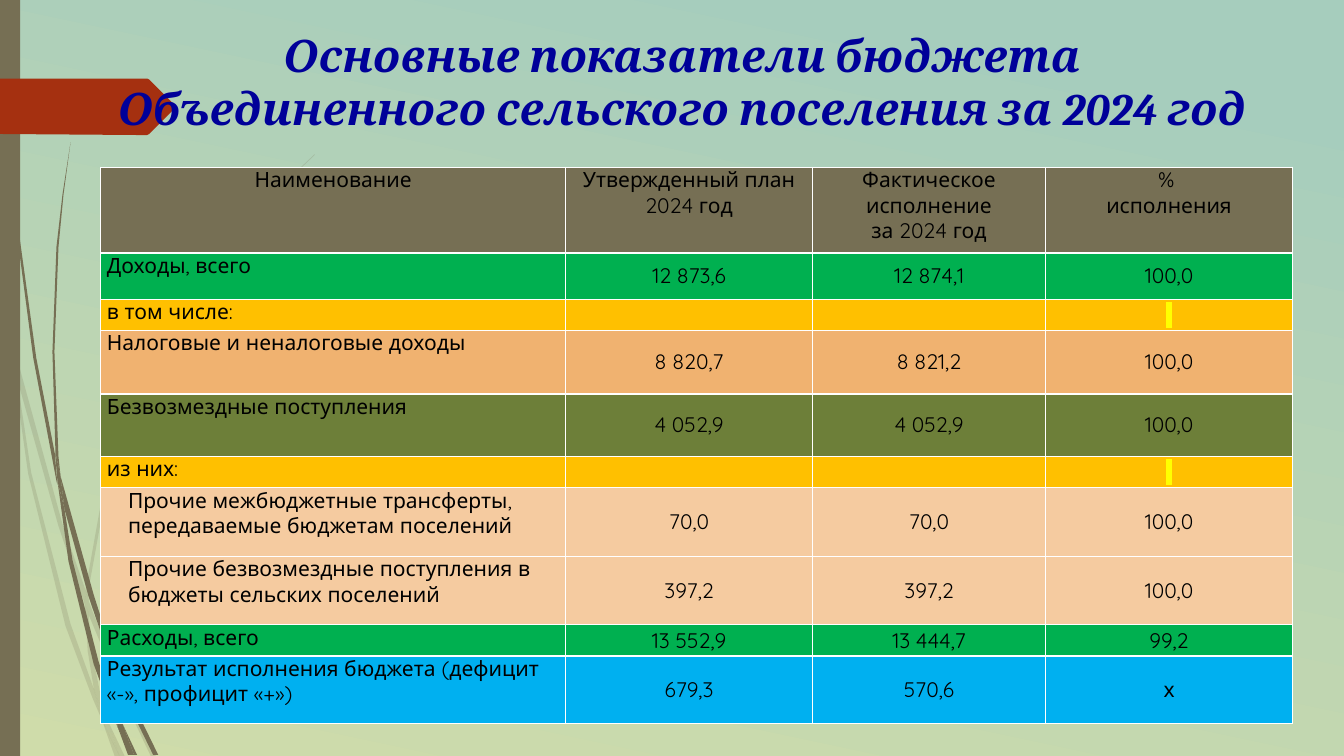
from dataclasses import dataclass

from lxml.etree import SubElement
from pptx import Presentation
from pptx.dml.color import RGBColor
from pptx.dml.fill import FillFormat
from pptx.enum.shapes import MSO_SHAPE
from pptx.enum.text import MSO_ANCHOR, MSO_AUTO_SIZE, PP_ALIGN
from pptx.oxml import parse_xml
from pptx.oxml.ns import nsdecls, qn
from pptx.shapes.autoshape import Shape
from pptx.table import _Cell
from pptx.text.text import _Paragraph
from pptx.util import Emu, Pt

PX = 9144
OLIVE, RED, NAVY, BLACK = "766F54", "A53010", "000099", "000000"
GREEN, AMBER, PEACH, BLUE = "00B050", "FFC000", "F5CBA0", "00B0F0"
WHITE, YELLOW = "FFFFFF", "FFFF00"
Point = tuple[int, int]


@dataclass(frozen=True)
class Grass:
    opacity: int
    blades: list[list[Point]]


@dataclass(frozen=True)
class BudgetRow:
    height: int
    fill: str
    label: str
    values: tuple[str, str, str]
    indent: int = 0
    spaced: bool = False


HEADINGS = ("Наименование", "Утвержденный план 2024 год",
            "Фактическое исполнение\nза 2024 год", "% \nисполнения")
HEADING_HEIGHT = 85
COLUMN_WIDTHS = (461, 245, 231, 245)
SUBHEADING_VALUES = ("", "", "\u00a0")
BUDGET = [
    BudgetRow(46, GREEN, "Доходы, всего", ("12 873,6", "12 874,1", "100,0"), spaced=True),
    BudgetRow(31, AMBER, "в том числе:", SUBHEADING_VALUES),
    BudgetRow(63, "F0B270", "Налоговые и неналоговые доходы", ("8 820,7", "8 821,2", "100,0")),
    BudgetRow(62, "6D7F39", "Безвозмездные поступления", ("4 052,9", "4 052,9", "100,0")),
    BudgetRow(31, AMBER, "из них:", SUBHEADING_VALUES),
    BudgetRow(68, PEACH, "Прочие межбюджетные трансферты, передаваемые бюджетам поселений",
              ("70,0", "70,0", "100,0"), indent=21),
    BudgetRow(68, PEACH, "Прочие безвозмездные поступления в бюджеты сельских поселений",
              ("397,2", "397,2", "100,0"), indent=21),
    BudgetRow(31, GREEN, "Расходы, всего", ("13 552,9", "13 444,7", "99,2")),
    BudgetRow(67, BLUE, "Результат исполнения бюджета (дефицит «-», профицит «+»)",
              ("679,3", "570,6", "х")),
]
PALE_GRASS = Grass(20, [
    [(11, 350), (9, 322), (0, 282), (0, 299), (10, 344)],
    [(58, 522), (84, 599), (85, 586), (62, 520), (14, 345), (17, 376)],
    [(92, 607), (88, 596), (88, 610), (123, 694), (150, 751), (155, 751), (127, 692)],
    [(119, 751), (124, 751), (105, 711)],
    [(93, 683), (70, 619), (31, 469), (17, 376), (11, 350), (28, 470), (65, 621), (92, 693),
     (101, 714), (99, 707)],
    [(84, 599), (87, 646), (93, 683), (96, 692), (105, 711), (103, 706), (91, 646), (88, 610),
     (88, 608)],
    [(88, 584), (110, 462), (160, 349), (229, 245), (268, 198), (290, 175), (312, 154),
     (312, 153), (289, 175), (268, 197), (228, 244), (158, 348), (107, 461), (85, 584),
     (85, 586), (88, 596)],
    [(101, 714), (114, 751), (119, 751)],
    [(88, 608), (88, 610), (88, 596), (85, 586), (84, 599)],
    [(96, 692), (93, 683), (99, 707), (101, 714), (119, 751), (105, 711)],
])
DARK_GRASS = Grass(100, [
    [(7, 110), (17, 233), (33, 355), (56, 477), (57, 481), (55, 457), (55, 453), (36, 355),
     (19, 232), (8, 109), (5, 48), (4, 0), (3, 0), (4, 48)],
    [(88, 592), (106, 645), (106, 631), (93, 590), (60, 472), (64, 505)],
    [(113, 649), (110, 641), (111, 656), (132, 708), (152, 749), (157, 749), (136, 706)],
    [(110, 691), (98, 657), (72, 556), (64, 505), (57, 477), (68, 557), (93, 659), (111, 708),
     (117, 722), (116, 717)],
    [(60, 472), (58, 453), (54, 349), (58, 245), (63, 193), (70, 141), (62, 193), (56, 245),
     (52, 349), (55, 449)],
    [(133, 749), (136, 749), (122, 719)],
    [(57, 477), (64, 505), (60, 472), (55, 449), (55, 453)],
    [(111, 633), (125, 552), (158, 476), (205, 406), (231, 374), (245, 359), (261, 344),
     (260, 344), (245, 358), (231, 373), (204, 405), (156, 474), (122, 551), (106, 631),
     (110, 641)],
    [(117, 722), (127, 749), (131, 749)],
    [(106, 645), (110, 691), (116, 706), (122, 719), (121, 716), (111, 656), (109, 651)],
    [(106, 645), (109, 651), (111, 656), (110, 641), (106, 631)],
    [(116, 706), (110, 691), (116, 717), (117, 722), (130, 749), (133, 749), (122, 719)],
])
RIBBON = [(174, 106), (173, 108), (148, 133), (146, 134), (136, 134), (0, 133), (0, 78),
          (136, 78), (146, 78), (148, 79), (173, 104)]


def px(length: int) -> Emu:
    return Emu(length * PX)


def colour(value: str) -> RGBColor:
    return RGBColor.from_string(value)


def paint(fill: FillFormat, value: str) -> None:
    fill.solid()
    fill.fore_color.rgb = colour(value)


def finish(shape: Shape, value: str) -> None:
    shape.shadow.inherit = False
    paint(shape.fill, value)
    shape.line.fill.background()


def draw_outline(shapes, points: list[Point], value: str) -> Shape:
    builder = shapes.build_freeform(*points[0], scale=PX)
    builder.add_line_segments(points[1:], close=True)
    outline = builder.convert_to_shape()
    finish(outline, value)
    return outline


def draw_grass(shapes, grass: Grass) -> None:
    tuft = shapes.add_group_shape()
    for points in grass.blades:
        blade = draw_outline(tuft.shapes, points, OLIVE)
        if grass.opacity < 100:
            tint = blade.fill._xPr.find(qn("a:solidFill"))[0]
            SubElement(tint, qn("a:alpha"), val=str(grass.opacity * 1000))


def write(paragraph: _Paragraph, text: str, font: str, size: int, value: str,
          heavy: bool = False) -> None:
    run = paragraph.add_run()
    run.text = text
    run.font.name = font
    run.font.size = Pt(size)
    run.font.bold = run.font.italic = heavy
    run.font.color.rgb = colour(value)
    if text == "\u00a0":
        mark = parse_xml(f'<a:highlight {nsdecls("a")}><a:srgbClr val="{YELLOW}"/></a:highlight>')
        run.font._element.find(qn("a:solidFill")).addnext(mark)


def fill_cell(cell: _Cell, text: str, fill: str, centred: bool = True, middle: bool = True,
              indent: int = 0, spaced: bool = False) -> None:
    paint(cell.fill, fill)
    cell.margin_left = cell.margin_right = px(6)
    cell.margin_top = cell.margin_bottom = 0
    cell.vertical_anchor = MSO_ANCHOR.MIDDLE if middle else MSO_ANCHOR.TOP
    properties = cell._tc.get_or_add_tcPr()
    for place, side in enumerate("LRTB"):
        properties.insert(place, parse_xml(
            f'<a:ln{side} {nsdecls("a")} w="12700"><a:solidFill><a:srgbClr val="{WHITE}"/>'
            f'</a:solidFill></a:ln{side}>'))
    for number, line in enumerate(text.split("\n")):
        paragraph = cell.text_frame.add_paragraph() if number else cell.text_frame.paragraphs[0]
        paragraph.alignment = PP_ALIGN.CENTER if centred else PP_ALIGN.LEFT
        paragraph.line_spacing = 0.97
        if spaced:
            paragraph.space_before, paragraph.space_after = Pt(12), Pt(3)
        if indent:
            paragraph._p.get_or_add_pPr().set("marL", str(px(indent)))
        if line:
            write(paragraph, line, "Quicksand", 15, BLACK)


def draw_budget(shapes) -> None:
    frame = shapes.add_table(len(BUDGET) + 1, len(HEADINGS), px(100), px(166), px(1182), px(552))
    budget = frame.table
    budget.first_row = budget.horz_banding = False
    for column, width in zip(budget.columns, COLUMN_WIDTHS):
        column.width = px(width)
    budget.rows[0].height = px(HEADING_HEIGHT)
    for place, heading in enumerate(HEADINGS):
        fill_cell(budget.cell(0, place), heading, OLIVE, middle=False, spaced=place == 0)
    for number, row in enumerate(BUDGET, start=1):
        budget.rows[number].height = px(row.height)
        fill_cell(budget.cell(number, 0), row.label, row.fill, centred=False, middle=False,
                  indent=row.indent, spaced=row.spaced)
        for place, value in enumerate(row.values, start=1):
            fill_cell(budget.cell(number, place), value, row.fill)


def main() -> None:
    deck = Presentation()
    deck.slide_width, deck.slide_height = px(1333), px(750)
    slide = deck.slides.add_slide(deck.slide_layouts[5])
    shapes = slide.shapes

    backdrop = slide.background.fill
    backdrop.gradient()
    backdrop.gradient_angle = 258
    for stop, position, value in zip(backdrop.gradient_stops, (0.1, 1), ("A6CDBD", "CFDCAA")):
        stop.position = position
        stop.color.rgb = colour(value)

    for grass in (PALE_GRASS, DARK_GRASS):
        draw_grass(shapes, grass)
    finish(shapes.add_shape(MSO_SHAPE.RECTANGLE, 0, 0, px(20), px(750)), OLIVE)
    draw_outline(shapes, RIBBON, RED)

    title = shapes.title
    title.left, title.top, title.width, title.height = px(47), px(22), px(1269), px(118)
    heading = title.text_frame
    heading.word_wrap = True
    heading.auto_size = MSO_AUTO_SIZE.SHAPE_TO_FIT_TEXT
    heading.vertical_anchor = MSO_ANCHOR.TOP
    first, second = heading.paragraphs[0], heading.add_paragraph()
    for paragraph, line in ((first, "Основные показатели бюджета "),
                            (second, "Объединенного сельского поселения за 2024 год ")):
        paragraph.alignment = PP_ALIGN.CENTER
        write(paragraph, line, "Cambria", 32, NAVY, heavy=True)
    shapes._spTree.append(title._element)

    draw_budget(shapes)
    deck.save("out.pptx")


if __name__ == "__main__":
    main()
